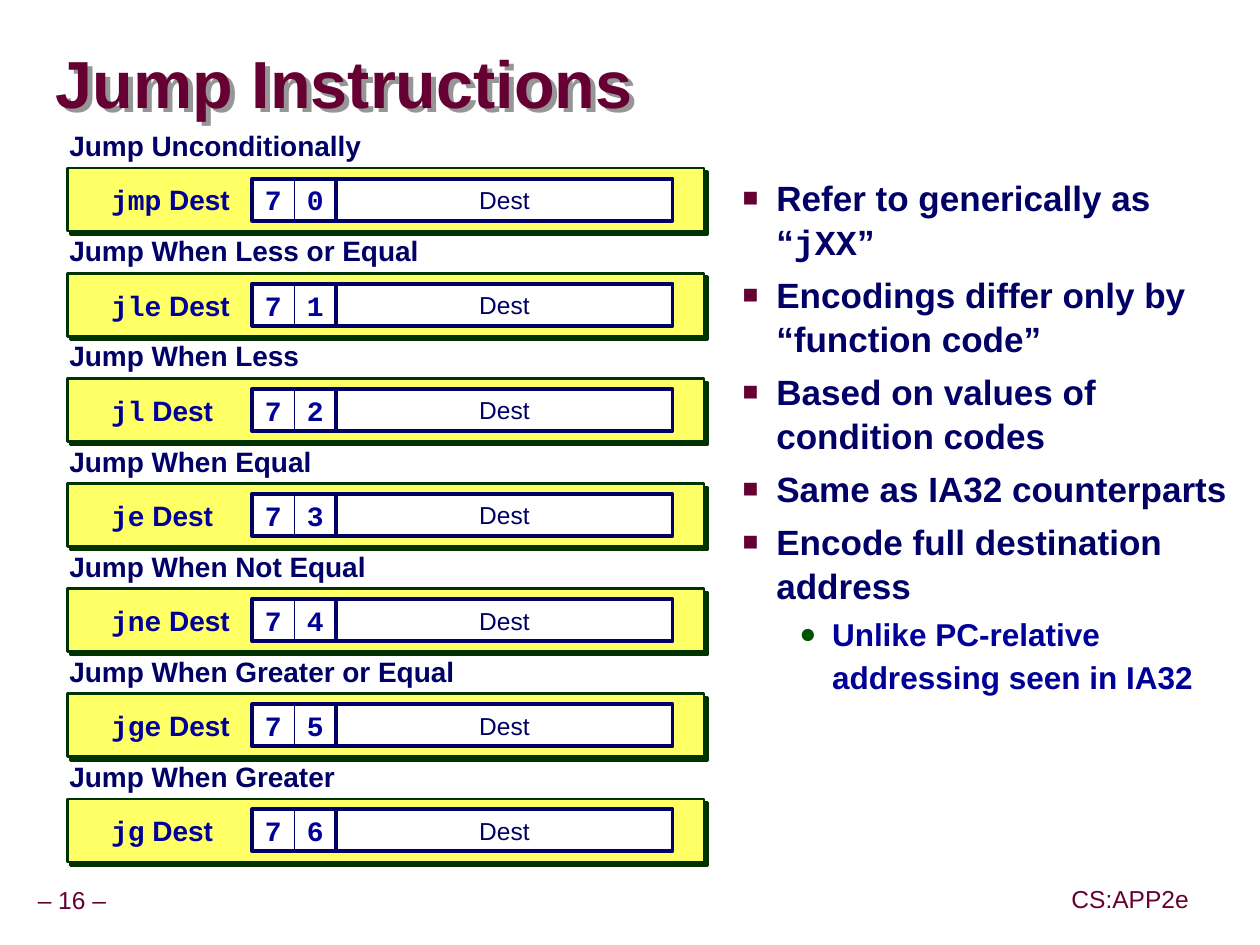
from lxml.etree import SubElement
from pptx import Presentation
from pptx.dml.color import RGBColor
from pptx.enum.shapes import MSO_SHAPE
from pptx.enum.text import MSO_ANCHOR as Anchor, MSO_AUTO_SIZE as AutoSize, PP_ALIGN as Align
from pptx.oxml.ns import qn
from pptx.util import Emu, Pt

PX = 7620  # EMU per px, 120 px to the inch
COLORS = {
    "maroon": "660033", "navy": "000066", "blue": "000099", "yellow": "FFFF66",
    "forest": "003300", "green": "005400", "white": "FFFFFF", "gray": "969696",
}
SANS, MONO = "Arial", "Courier New"
ROW_PITCH = 100

JUMPS = [
    ("Jump Unconditionally", "jmp"),
    ("Jump When Less or Equal", "jle"),
    ("Jump When Less", "jl"),
    ("Jump When Equal", "je"),
    ("Jump When Not Equal", "jne"),
    ("Jump When Greater or Equal", "jge"),
    ("Jump When Greater", "jg"),
]
# Each note is a list of (text, font) runs
NOTES = [
    [("Refer to generically as “", SANS), ("jXX", MONO), ("”", SANS)],
    [("Encodings differ only by “function code”", SANS)],
    [("Based on values of condition codes", SANS)],
    [("Same as IA32 counterparts", SANS)],
    [("Encode full destination address", SANS)],
]
SUBNOTE = [("Unlike PC-relative addressing seen in IA32", SANS)]


def px(value):
    return Emu(value * PX)


def rgb(name):
    return RGBColor.from_string(COLORS[name])


def add_shadow(shape, color, distance):
    """Give the shape a hard shadow towards the lower right."""
    shape.shadow.inherit = False
    effects = shape._element.spPr.find(qn("a:effectLst"))
    shadow = SubElement(effects, qn("a:outerShdw"), dist=str(Pt(distance)),
                        dir="2700000", algn="ctr", rotWithShape="0")
    SubElement(shadow, qn("a:srgbClr"), val=COLORS[color])


def set_frame(shape, margin_x=0, margin_y=0, anchor=Anchor.MIDDLE, wrap=True):
    frame = shape.text_frame
    frame.auto_size = AutoSize.NONE
    frame.word_wrap = wrap
    frame.vertical_anchor = anchor
    frame.margin_left = frame.margin_right = px(margin_x)
    frame.margin_top = frame.margin_bottom = px(margin_y)
    return frame


def write(paragraph, runs, size, color, bold=True, align=Align.LEFT, spacing=1.0):
    """Fill a paragraph with (text, font) runs of one size and colour."""
    paragraph.alignment = align
    paragraph.line_spacing = spacing
    font = paragraph.font
    font.name, font.size, font.bold = runs[0][1], Pt(size), bold
    font.color.rgb = rgb(color)
    for text, name in runs:
        run = paragraph.add_run()
        run.text = text
        if len(runs) > 1:
            run.font.name = name


def add_text(shapes, box, runs, size, color, margin_x=6, margin_y=6, wrap=True, **style):
    shape = shapes.add_textbox(*map(px, box))
    frame = set_frame(shape, margin_x, margin_y, wrap=wrap)
    write(frame.paragraphs[0], runs, size, color, **style)


def add_box(shapes, box, fill, line, width):
    shape = shapes.add_shape(MSO_SHAPE.RECTANGLE, *map(px, box))
    shape.shadow.inherit = False
    if fill:
        shape.fill.solid()
        shape.fill.fore_color.rgb = rgb(fill)
    else:
        shape.fill.background()
    shape.line.color.rgb = rgb(line)
    shape.line.width = Pt(width)
    return shape


def add_field(shapes, box, line_width, text, font, size, color, bold):
    field = add_box(shapes, box, "white", "navy", line_width)
    write(set_frame(field).paragraphs[0], [(text, font)], size, color, bold, Align.CENTER)


def add_title(slide, box, text):
    title = slide.shapes.title
    title.left, title.top, title.width, title.height = map(px, box)
    write(set_frame(title).paragraphs[0], [(text, SANS)], 38, "maroon", spacing=0.87)
    add_shadow(title, "gray", 4)


def add_jump(slide, left, top, label, mnemonic, code):
    """One instruction: label, yellow card and its encoding fields."""
    shapes = slide.shapes.add_group_shape().shapes
    card = add_box(shapes, (left + 4, top + 40, 606, 60), "yellow", "forest", 1.5)
    add_shadow(card, "forest", 2.8)
    add_text(shapes, (left, top, 400, 41), [(label, SANS)], 16, "navy", spacing=0.9)

    # Assembly form
    field_top = top + 50
    add_text(shapes, (left + 34, field_top, 146, 40),
             [(mnemonic, MONO), (" Dest", SANS)], 16, "blue", margin_x=12)

    # Encoding: instruction code, function code, destination
    for index, digit in enumerate(("7", str(code))):
        add_field(shapes, (left + 180 + 40 * index, field_top, 40, 40), 0.5,
                  digit, MONO, 16, "blue", True)
    add_box(shapes, (left + 180, field_top, 80, 40), None, "navy", 2.25)
    add_field(shapes, (left + 260, field_top, 320, 40), 2.25, "Dest", SANS, 14, "navy", False)


def add_bullet(paragraph, symbol, color, percent, margin, hanging):
    properties = paragraph._p.get_or_add_pPr()
    properties.set("marL", str(px(margin)))
    properties.set("indent", str(-px(hanging)))
    bullet_color = SubElement(properties, qn("a:buClr"))
    SubElement(bullet_color, qn("a:srgbClr"), val=COLORS[color])
    SubElement(properties, qn("a:buSzPct"), val=str(percent * 1000))
    SubElement(properties, qn("a:buFont"), typeface=SANS)
    SubElement(properties, qn("a:buChar"), char=symbol)
    properties.append(properties.find(qn("a:defRPr")))  # must follow the bullet


def add_notes_column(slide, box):
    shape = slide.shapes.add_textbox(*map(px, box))
    frame = set_frame(shape, 12, 6, Anchor.TOP)
    for index, runs in enumerate(NOTES):
        paragraph = frame.add_paragraph() if index else frame.paragraphs[0]
        write(paragraph, runs, 20, "navy", spacing=1.05)
        paragraph.space_before = Pt(5)
        add_bullet(paragraph, "■", "maroon", 75, 97, 32)

    paragraph = frame.add_paragraph()
    paragraph.level = 1
    write(paragraph, SUBNOTE, 18, "blue", spacing=1.13)
    paragraph.space_before = Pt(2)
    add_bullet(paragraph, "●", "green", 90, 150, 31)


def add_footer(slide, box, text):
    add_text(slide.shapes, box, [(text, SANS)], 14, "maroon", wrap=False,
             bold=False, align=Align.CENTER, spacing=0.9)


def main():
    presentation = Presentation()
    presentation.slide_width, presentation.slide_height = px(1199), px(899)
    slide = presentation.slides.add_slide(presentation.slide_layouts[5])

    add_footer(slide, (29, 839, 79, 37), "– 16 –")
    add_footer(slide, (1013, 838, 125, 37), "CS:APP2e")
    add_title(slide, (53, 32, 1142, 102), "Jump Instructions")
    add_notes_column(slide, (630, 160, 569, 684))
    for code, (label, mnemonic) in enumerate(JUMPS):
        add_jump(slide, 60, 120 + ROW_PITCH * code, label, mnemonic, code)

    presentation.save("out.pptx")


if __name__ == "__main__":
    main()
